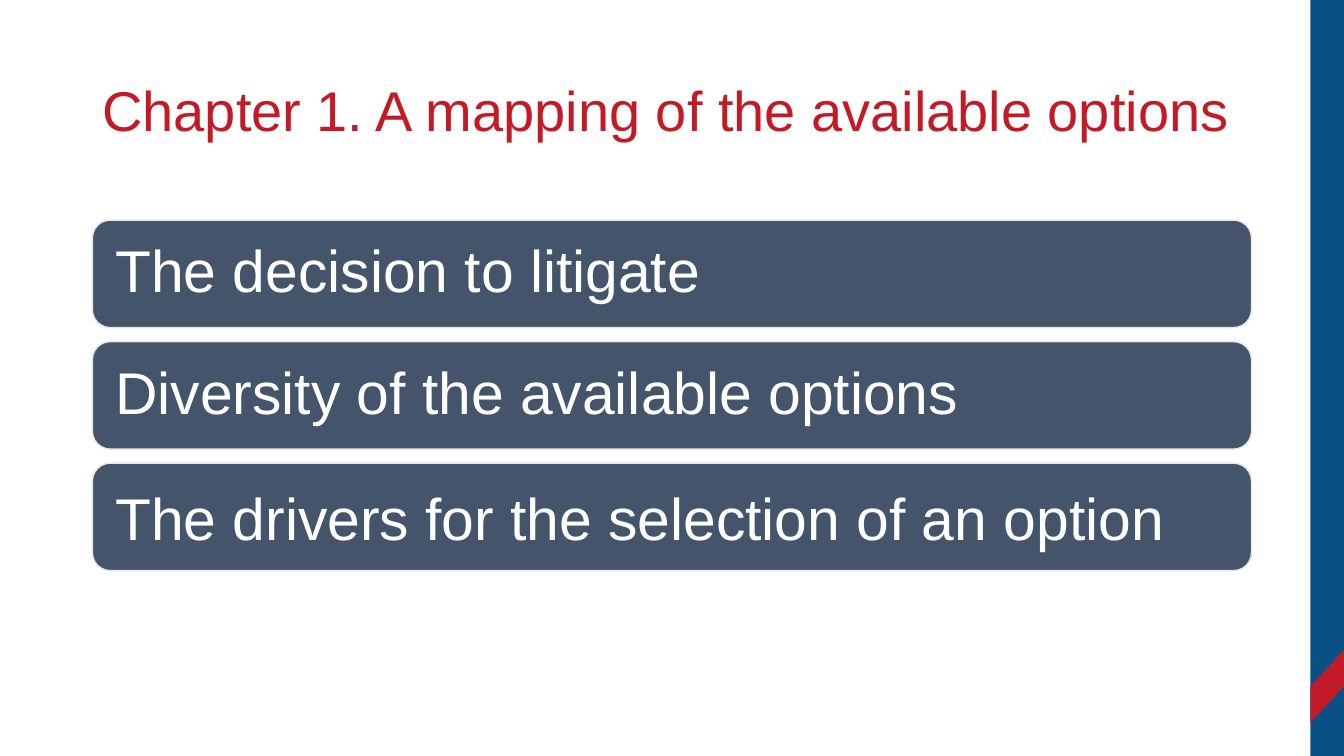
import dataclasses

import pptx
import pptx.dml.color
import pptx.enum.shapes
import pptx.enum.text
import pptx.util

Pt = pptx.util.Pt
RGB = pptx.dml.color.RGBColor.from_string
MSO = pptx.enum.shapes.MSO_SHAPE


@dataclasses.dataclass(frozen=True)
class Theme:
    """Colours, font and type sizes of the slide."""
    blue: str = "095184"
    red: str = "C41927"
    slate: str = "44546A"
    edge: str = "E7E6E6"
    white: str = "FFFFFF"
    font: str = "Arial"
    title_size: int = 40
    bar_size: int = 42


THEME = Theme()


def add_filled(s, kind, box, fill):
    """Add a preset shape with a plain fill and no line or shadow."""
    sp = s.shapes.add_shape(kind, *map(Pt, box))
    sp.shadow.inherit = False
    sp.fill.solid()
    sp.fill.fore_color.rgb = RGB(fill)
    sp.line.fill.background()
    return sp


def add_triangle(s, box, flip):
    """Add a red right triangle flipped by the given attribute."""
    sp = add_filled(s, MSO.RIGHT_TRIANGLE, box, THEME.red)
    sp._element.spPr.xfrm.set(flip, "1")


def set_text(sp, text, size, colour, insets):
    """Write one left-aligned line, centred vertically in the shape."""
    tf = sp.text_frame
    tf.word_wrap = True
    tf.vertical_anchor = pptx.enum.text.MSO_ANCHOR.MIDDLE
    tf.margin_left, tf.margin_top, tf.margin_right, tf.margin_bottom = map(Pt, insets)
    tf.text = text
    p = tf.paragraphs[0]
    p.alignment = pptx.enum.text.PP_ALIGN.LEFT
    p.line_spacing = 0.9
    r = p.runs[0]
    r.font.name = THEME.font
    r.font.size = Pt(size)
    r.font.color.rgb = RGB(colour)


def add_title(s, text):
    """Add the slide title."""
    sp = s.shapes.add_textbox(Pt(66), Pt(28.8), Pt(828), Pt(104.4))
    set_text(sp, text, THEME.title_size, THEME.red, (7.2, 3.6, 7.2, 3.6))


def add_bar(s, text, top, drop):
    """Add a rounded bar whose text sits lower by half the drop."""
    sp = add_filled(s, MSO.ROUNDED_RECTANGLE, (66, top, 828, 76.8), THEME.slate)
    sp.adjustments[0] = 0.167
    sp.line.color.rgb = RGB(THEME.edge)
    sp.line.width = Pt(1)
    set_text(sp, text, THEME.bar_size, THEME.white, (12.6, 12.6 + drop, 12.6, 12.6))


def main():
    """Build the slide and save it."""
    prs = pptx.Presentation()
    prs.slide_width, prs.slide_height = Pt(960), Pt(540)
    s = prs.slides.add_slide(prs.slide_layouts[6])
    add_filled(s, MSO.RECTANGLE, (936, 0, 24, 540), THEME.blue)
    add_triangle(s, (936, 490.3, 24, 25.9), "flipV")
    add_triangle(s, (936, 464.4, 24, 25.9), "flipH")
    add_title(s, "Chapter 1. A mapping of the available options")
    bars = (
        ("The decision to litigate", 0),
        ("Diversity of the available options", 0),
        ("The drivers for the selection of an option", 6),
    )
    for i, (text, drop) in enumerate(bars):
        add_bar(s, text, 157.2 + i * 86.8, drop)
    prs.save("out.pptx")


if __name__ == "__main__":
    main()
